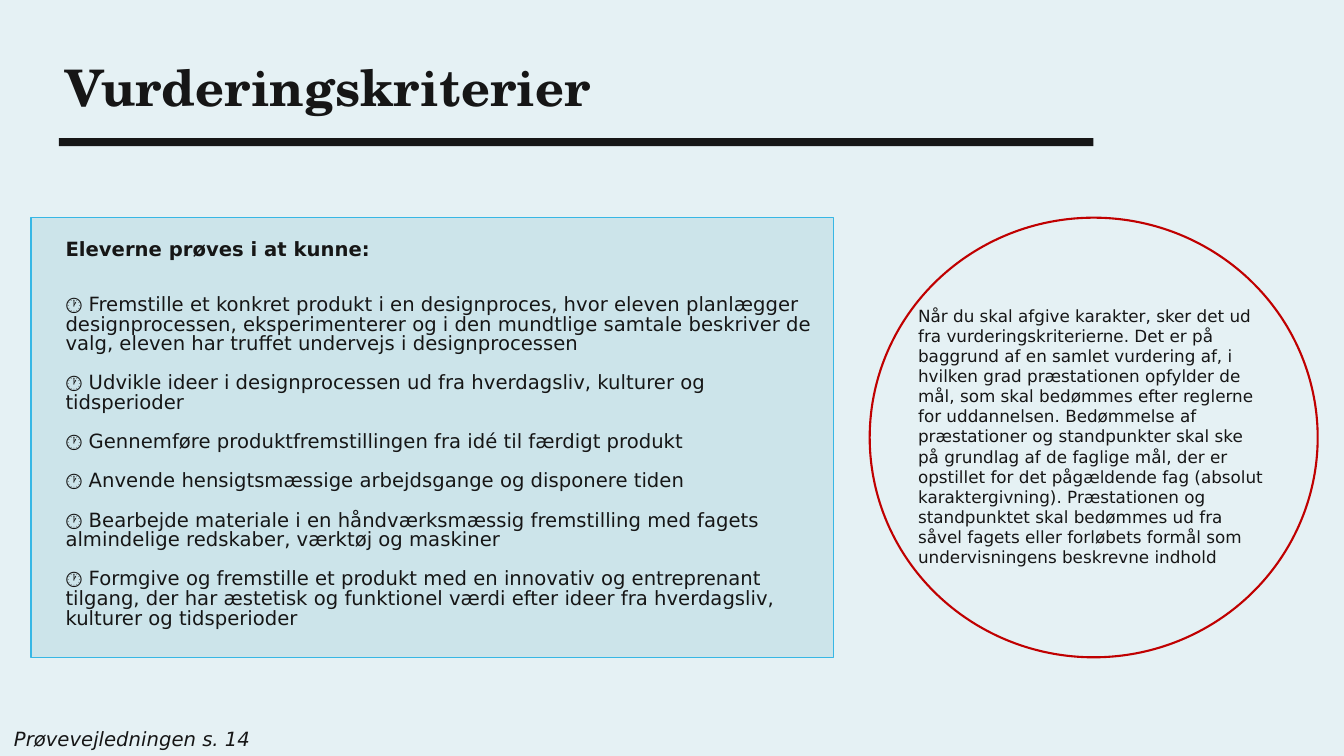
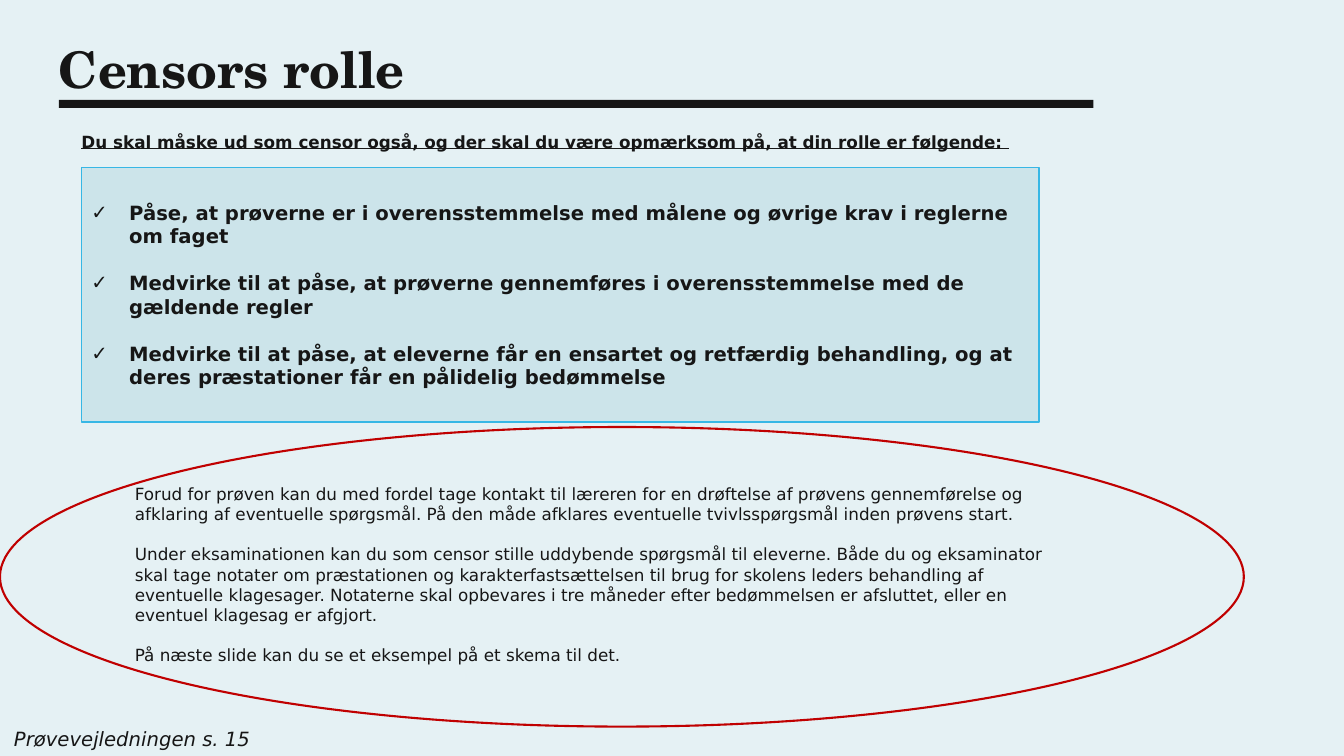
"""Build two slides on assessment criteria and the role of the examiner."""
from dataclasses import dataclass

from lxml import etree
from pptx import Presentation
from pptx.dml.color import RGBColor
from pptx.enum.shapes import MSO_SHAPE
from pptx.enum.text import MSO_ANCHOR, PP_ALIGN
from pptx.oxml.ns import qn
from pptx.util import Pt

RECTANGLE = MSO_SHAPE.RECTANGLE
OVAL = MSO_SHAPE.OVAL
TOP = MSO_ANCHOR.TOP
MIDDLE = MSO_ANCHOR.MIDDLE
LEFT = PP_ALIGN.LEFT
TITLE_ONLY = 5


@dataclass(frozen=True)
class Theme:
    """Colours, fonts, type sizes and line spacing of the deck."""
    background: RGBColor = RGBColor(0xE5, 0xF1, 0xF4)
    panel: RGBColor = RGBColor(0xCC, 0xE4, 0xEA)
    border: RGBColor = RGBColor(0x37, 0xB7, 0xE5)
    ink: RGBColor = RGBColor(0x16, 0x16, 0x16)
    accent: RGBColor = RGBColor(0xC0, 0x00, 0x00)
    title_font: str = "TeX Gyre Schola"
    body_font: str = "DejaVu Sans"
    title_size: int = 36
    body_size: int = 14
    note_size: int = 12
    leading: float = 1.2
    tight: float = 0.83


THEME = Theme()
BODY_LINE = THEME.body_size * THEME.leading
NOTE_LINE = THEME.note_size * THEME.leading
CRITERIA_LINE = 14

CRITERIA_HEADING = "Eleverne prøves i at kunne:"
CRITERIA = [
    "Fremstille et konkret produkt i en designproces, hvor eleven planlægger "
    "designprocessen, eksperimenterer og i den mundtlige samtale beskriver de valg, "
    "eleven har truffet undervejs i designprocessen",
    "Udvikle ideer i designprocessen ud fra hverdagsliv, kulturer og tidsperioder",
    "Gennemføre produktfremstillingen fra idé til færdigt produkt",
    "Anvende hensigtsmæssige arbejdsgange og disponere tiden",
    "Bearbejde materiale i en håndværksmæssig fremstilling med fagets almindelige "
    "redskaber, værktøj og maskiner",
    "Formgive og fremstille et produkt med en innovativ og entreprenant tilgang, der har "
    "æstetisk og funktionel værdi efter ideer fra hverdagsliv, kulturer og tidsperioder",
]
GRADING = (
    "Når du skal afgive karakter, sker det ud fra vurderingskriterierne. Det er på baggrund "
    "af en samlet vurdering af, i hvilken grad præstationen opfylder de mål, som skal bedømmes "
    "efter reglerne for uddannelsen. Bedømmelse af præstationer og standpunkter skal ske på "
    "grundlag af de faglige mål, der er opstillet for det pågældende fag (absolut "
    "karaktergivning). Præstationen og standpunktet skal bedømmes ud fra såvel fagets eller "
    "forløbets formål som undervisningens beskrevne indhold"
)
ROLE_INTRO = (
    "Du skal måske ud som censor også, og der skal du være opmærksom på, at din rolle er "
    "følgende: "
)
ROLES = [
    "Påse, at prøverne er i overensstemmelse med målene og øvrige krav i reglerne om faget",
    "Medvirke til at påse, at prøverne gennemføres i overensstemmelse med de gældende regler",
    "Medvirke til at påse, at eleverne får en ensartet og retfærdig behandling, og at deres "
    "præstationer får en pålidelig bedømmelse",
]
EXAM_NOTES = [
    "Forud for prøven kan du med fordel tage kontakt til læreren for en drøftelse af prøvens "
    "gennemførelse og afklaring af eventuelle spørgsmål. På den måde afklares eventuelle "
    "tvivlsspørgsmål inden prøvens start.",
    "Under eksaminationen kan du som censor stille uddybende spørgsmål til eleverne. Både du "
    "og eksaminator skal tage notater om præstationen og karakterfastsættelsen til brug for "
    "skolens leders behandling af eventuelle klagesager. Notaterne skal opbevares i tre "
    "måneder efter bedømmelsen er afsluttet, eller en eventuel klagesag er afgjort.",
    "På næste slide kan du se et eksempel på et skema til det.",
]


def points(values):
    """Convert numbers to lengths in points."""
    return [Pt(value) for value in values]


def prepare_frame(frame, anchor=TOP, inset=True):
    """Set wrapping, anchoring and insets of a text frame."""
    frame.word_wrap = True
    frame.vertical_anchor = anchor
    if not inset:
        frame.margin_left = frame.margin_right = 0
        frame.margin_top = frame.margin_bottom = 0


def add_span(para, text, size, font=THEME.body_font, bold=False, italic=False, underline=False):
    """Add one formatted run to a paragraph."""
    span = para.add_run()
    span.text = text
    span.font.name = font
    span.font.size = Pt(size)
    span.font.color.rgb = THEME.ink
    span.font.bold = bold
    span.font.italic = italic
    span.font.underline = underline


def add_bullet(para, indent):
    """Give a paragraph a hanging check mark."""
    properties = para._p.get_or_add_pPr()
    properties.set("marL", str(Pt(indent)))
    properties.set("indent", str(-Pt(indent)))
    etree.SubElement(properties, qn("a:buFont")).set("typeface", THEME.body_font)
    etree.SubElement(properties, qn("a:buChar")).set("char", "✓")


def write_paragraphs(frame, texts, size, line, gap=0, bullet_indent=0, **style):
    """Fill a frame with paragraphs that are separated by an equal gap."""
    for index, text in enumerate(texts):
        para = frame.add_paragraph() if index else frame.paragraphs[0]
        para.alignment = LEFT
        if bullet_indent:
            add_bullet(para, bullet_indent)
        para.line_spacing = Pt(line)
        if index:
            para.space_before = Pt(gap)
        add_span(para, text, size, **style)


def add_text(page, bounds, texts, size, line, gap=0, inset=False, **style):
    """Add a text box and return its frame."""
    frame = page.shapes.add_textbox(*points(bounds)).text_frame
    prepare_frame(frame, inset=inset)
    write_paragraphs(frame, texts, size, line, gap, **style)
    return frame


def add_block(page, kind, bounds, fill=None, line=None, width=1):
    """Add a flat shape with an optional fill and outline."""
    block = page.shapes.add_shape(kind, *points(bounds))
    block.shadow.inherit = False
    if fill is None:
        block.fill.background()
    else:
        block.fill.solid()
        block.fill.fore_color.rgb = fill
    if line is None:
        block.line.fill.background()
    else:
        block.line.color.rgb = line
        block.line.width = Pt(width)
    return block


def add_panel(page, bounds):
    """Add a bordered content panel."""
    return add_block(page, RECTANGLE, bounds, THEME.panel, THEME.border)


def add_ring(page, bounds):
    """Add a red outlined oval."""
    return add_block(page, OVAL, bounds, line=THEME.accent, width=1.5)


def add_page(deck, title, title_bounds, rule_top, source_page):
    """Add a slide with its title, rule and source reference."""
    page = deck.slides.add_slide(deck.slide_layouts[TITLE_ONLY])
    box = page.shapes.title
    box.left, box.top, box.width, box.height = points(title_bounds)
    prepare_frame(box.text_frame, inset=False)
    para = box.text_frame.paragraphs[0]
    para.alignment = LEFT
    para.line_spacing = THEME.tight
    add_span(para, title, THEME.title_size, THEME.title_font, bold=True)
    add_block(page, RECTANGLE, (42, rule_top, 739, 5.8), THEME.ink)
    add_text(page, (10, 519, 191, 17), [f"Prøvevejledningen s. {source_page}"],
             THEME.body_size, BODY_LINE, italic=True)
    return page


def add_criteria_page(deck):
    """Build the slide on assessment criteria."""
    page = add_page(deck, "Vurderingskriterier", (46.5, 47.5, 534, 53), 98.6, 14)
    add_panel(page, (22.3, 155.5, 573, 314))
    frame = add_text(page, (46.8, 172, 541.4, 290), [CRITERIA_HEADING],
                     THEME.body_size, CRITERIA_LINE, bold=True)
    for index, criterion in enumerate(CRITERIA):
        para = frame.add_paragraph()
        para.line_spacing = Pt(CRITERIA_LINE)
        para.space_before = Pt(CRITERIA_LINE if index else 25.3)
        add_span(para, f"🕐 {criterion}", THEME.body_size)
    add_text(page, (648.7, 214.5, 265, 196.6), [GRADING], THEME.note_size, NOTE_LINE, inset=True)
    add_ring(page, (621.2, 155.5, 320, 314))


def add_examiner_page(deck):
    """Build the slide on the role of the examiner."""
    page = add_page(deck, "Censors rolle", (42, 34.5, 729, 73), 71.3, 15)
    add_text(page, (58.2, 93.8, 817, 14.4), [ROLE_INTRO], THEME.note_size, NOTE_LINE,
             bold=True, underline=True)
    panel = add_panel(page, (58.2, 119.5, 684, 182))
    prepare_frame(panel.text_frame, MIDDLE)
    write_paragraphs(panel.text_frame, ROLES, THEME.body_size, BODY_LINE, BODY_LINE,
                     bullet_indent=27, bold=True)
    add_text(page, (89.3, 342, 665, 138), EXAM_NOTES, THEME.note_size, NOTE_LINE, NOTE_LINE,
             inset=True)
    add_ring(page, (0, 305, 888.5, 214))


def main():
    """Create and save the deck."""
    deck = Presentation()
    deck.slide_width, deck.slide_height = points((960, 540))
    backdrop = deck.slide_master.background.fill
    backdrop.solid()
    backdrop.fore_color.rgb = THEME.background
    add_criteria_page(deck)
    add_examiner_page(deck)
    deck.save("out.pptx")


if __name__ == "__main__":
    main()
